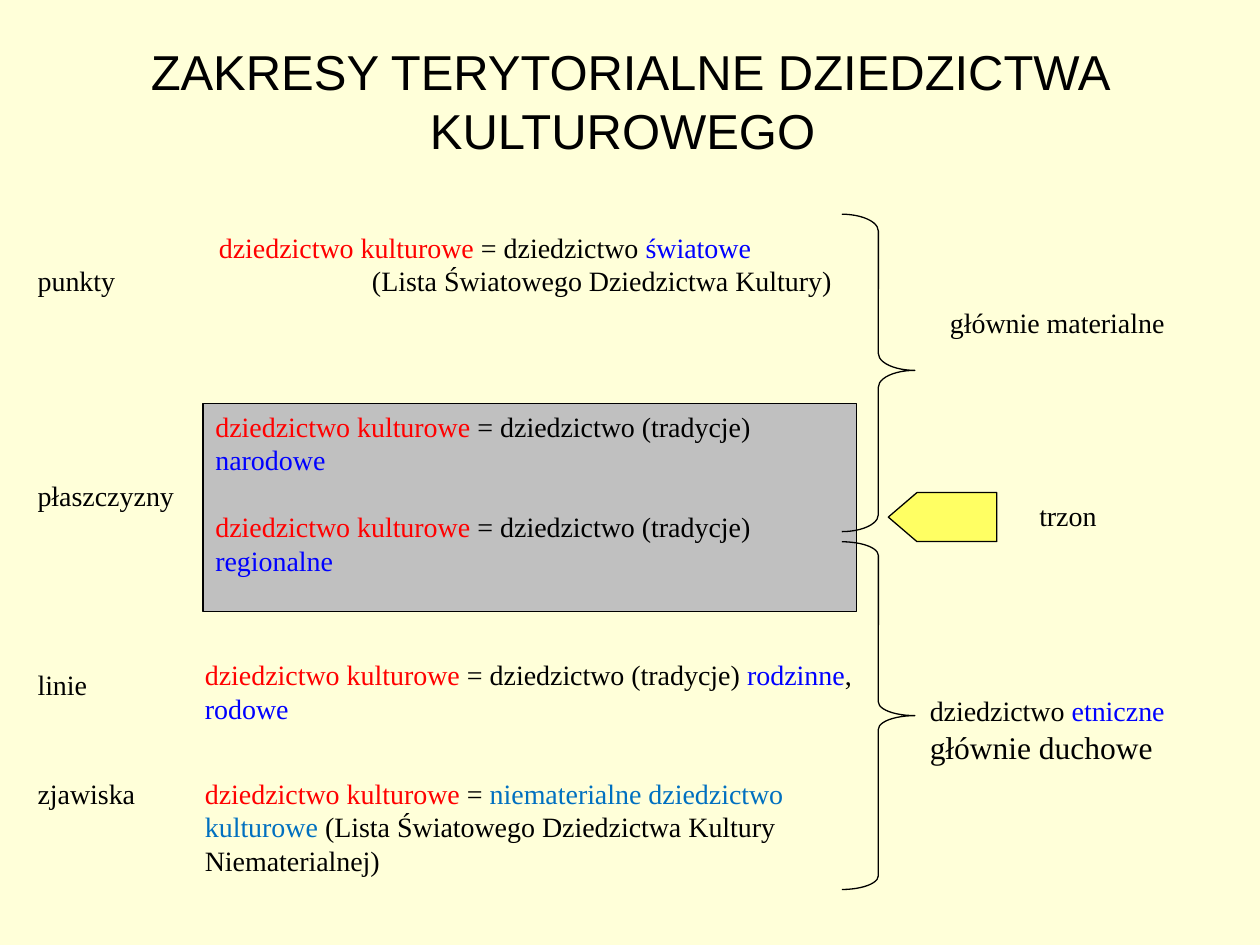
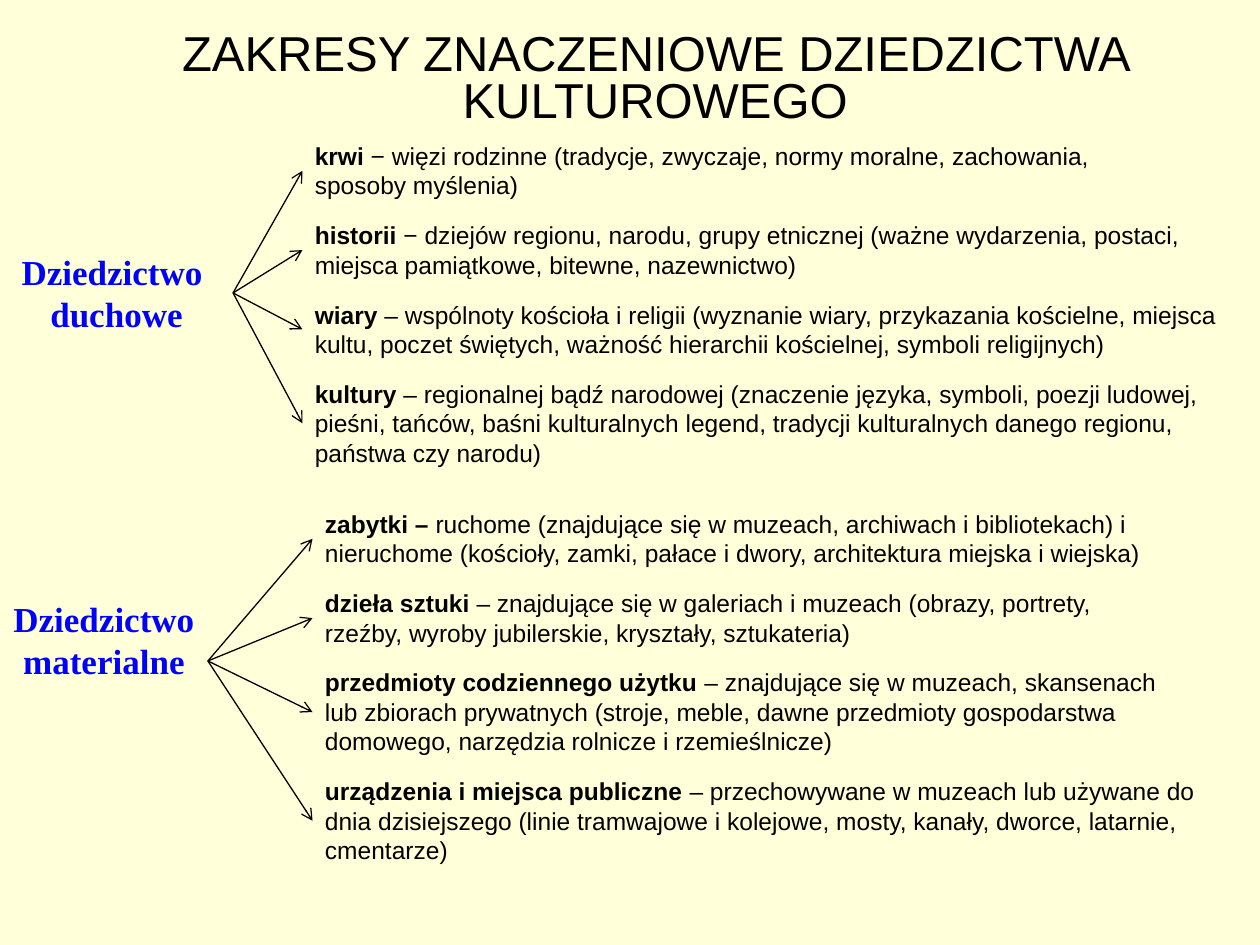
"""Build two slides on the territorial and semantic scopes of cultural heritage."""
from lxml import etree
from pptx import Presentation
from pptx.dml.color import RGBColor
from pptx.enum.shapes import MSO_CONNECTOR, MSO_SHAPE
from pptx.enum.text import MSO_ANCHOR, PP_ALIGN
from pptx.oxml.ns import qn
from pptx.util import Pt

TOP = MSO_ANCHOR.TOP
LEFT, CENTER = PP_ALIGN.LEFT, PP_ALIGN.CENTER
RECTANGLE, ARROW, BRACE = MSO_SHAPE.RECTANGLE, MSO_SHAPE.LEFT_ARROW, MSO_SHAPE.RIGHT_BRACE
STRAIGHT = MSO_CONNECTOR.STRAIGHT

SANS, SERIF = "Arial", "Times New Roman"
THEME = {
    "background": "FFFFD9",
    "line": "000000",
    "line_width": 0.75,
    "core": "C0C0C0",
    "pointer": "FFFF63",
    "title": {"name": SANS, "size": 28, "color": "000000"},
    "plain": {"name": SERIF, "size": 16, "color": "000000"},
    "large": {"name": SERIF, "size": 18, "color": "000000"},
    "term": {"name": SERIF, "size": 16, "color": "FF0000"},
    "scope": {"name": SERIF, "size": 16, "color": "0000FF"},
    "intangible": {"name": SERIF, "size": 16, "color": "0070C0"},
    "group": {"name": SERIF, "size": 20, "color": "0000FF", "bold": True},
    "keyword": {"name": SANS, "size": 14, "color": "000000", "bold": True},
    "detail": {"name": SANS, "size": 14, "color": "000000"},
}

TERM = ("dziedzictwo kulturowe ", "term")
TRADITIONS = ("= dziedzictwo (tradycje) ", "plain")

TERRITORIAL_TITLE = "ZAKRESY TERYTORIALNE DZIEDZICTWA KULTUROWEGO "
LEVELS = [
    ("punkty", 147, 62),
    ("płaszczyzny", 270, 94),
    ("linie", 378, 94),
    ("zjawiska", 440, 96),
]
CORE_BOX = (116, 230.4, 373.6, 119)
CORE_TEXT = [
    [TERM, TRADITIONS, ("narodowe", "scope")],
    [TERM, TRADITIONS, ("regionalne", "scope")],
]
WORLD_BOX = (118, 128, 546, 103)
WORLD_TEXT = [
    [TERM, ("= dziedzictwo ", "plain"), ("światowe", "scope")],
    [("(Lista Światowego Dziedzictwa Kultury)", "plain")],
]
SCOPE_TEXTS = [
    ((110, 372.2, 414.7, 56),
     [[TERM, TRADITIONS, ("rodzinne", "scope"), (", ", "plain"), ("rodowe", "scope")]]),
    ((110, 440, 374.4, 65.5),
     [[TERM, ("= ", "plain"), ("niematerialne dziedzictwo kulturowe ", "intangible"),
       ("(Lista Światowego Dziedzictwa Kultury Niematerialnej)", "plain")]]),
    ((535.7, 170.8, 145.4, 42), [[("głównie materialne", "plain")]]),
    ((586.8, 281.5, 77, 26.6), [[("trzon", "plain")]]),
    ((524.2, 393, 186.5, 104),
     [[("dziedzictwo ", "plain"), ("etniczne", "scope")], [("głównie duchowe", "large")]]),
]
POINTER = ((507.6, 281.5, 62, 28), (1, 0.585))
BRACES = [
    ((481, 122.4, 41.8, 181.4), (0.231, 0.492)),
    ((481, 309.6, 41.8, 198.7), (0.187, 0.5)),
]

SEMANTIC_TITLE = "ZAKRESY ZNACZENIOWE DZIEDZICTWA KULTUROWEGO"
GROUPS = [
    {
        "label": ["Dziedzictwo ", "duchowe"],
        "label_box": (0, 139.7, 133.2, 55.4),
        "list_left": 172.8,
        "list_top": 77,
        "items": [
            ("krwi", " − więzi rodzinne (tradycje, zwyczaje, normy moralne, zachowania, "
             "sposoby myślenia)", 507.6, 2),
            ("historii", " − dziejów regionu, narodu, grupy etnicznej (ważne wydarzenia, "
             "postaci, miejsca pamiątkowe, bitewne, nazewnictwo)", 524.2, 2),
            ("wiary", " – wspólnoty kościoła i religii (wyznanie wiary, przykazania kościelne, "
             "miejsca kultu, poczet świętych, ważność hierarchii kościelnej, "
             "symboli religijnych)", 535.7, 2),
            ("kultury", " – regionalnej bądź narodowej (znaczenie języka, symboli, poezji "
             "ludowej, pieśni, tańców, baśni kulturalnych legend, tradycji kulturalnych "
             "danego regionu, państwa czy narodu)", 547.2, 3),
        ],
    },
    {
        "label": ["Dziedzictwo materialne"],
        "label_box": (0, 337.7, 118.8, 80),
        "list_left": 178.6,
        "list_top": 287.3,
        "items": [
            ("zabytki – ", "ruchome (znajdujące się w muzeach, archiwach i bibliotekach) i "
             "nieruchome (kościoły, zamki, pałace i dwory, architektura miejska i wiejska)",
             527, 2),
            ("dzieła sztuki", " – znajdujące się w galeriach i muzeach (obrazy, portrety, "
             "rzeźby, wyroby jubilerskie, kryształy, sztukateria)", 481.7, 2),
            ("przedmioty codziennego użytku", " – znajdujące się w muzeach, skansenach lub "
             "zbiorach prywatnych (stroje, meble, dawne przedmioty gospodarstwa domowego, "
             "narzędzia rolnicze i rzemieślnicze)", 499, 3),
            ("urządzenia i miejsca publiczne", " – przechowywane w muzeach lub używane do dnia "
             "dzisiejszego (linie tramwajowe i kolejowe, mosty, kanały, dworce, latarnie, "
             "cmentarze)", 527, 3),
        ],
    },
]
LINE_HEIGHT, BOX_PADDING, ITEM_GAP = 16.8, 7.6, 4.1


def points(values):
    return [Pt(value) for value in values]


def color(name):
    return RGBColor.from_string(name)


def add_run(paragraph, text, style):
    run = paragraph.add_run()
    run.text = text
    for attribute, value in THEME[style].items():
        if attribute == "color":
            run.font.color.rgb = color(value)
        else:
            setattr(run.font, attribute, Pt(value) if attribute == "size" else value)


def write(shape, paragraphs, alignment=LEFT, **spacing):
    frame = shape.text_frame
    frame.word_wrap = True
    frame.vertical_anchor = TOP
    for index, runs in enumerate(paragraphs):
        paragraph = frame.add_paragraph() if index else frame.paragraphs[0]
        paragraph.alignment = alignment
        for attribute, value in spacing.items():
            if index or attribute != "space_before":
                setattr(paragraph, attribute, value)
        for text, style in runs:
            add_run(paragraph, text, style)


def add_text(slide, box, paragraphs, alignment=LEFT, **spacing):
    shape = slide.shapes.add_textbox(*points(box))
    write(shape, paragraphs, alignment, **spacing)
    return shape


def add_figure(slide, kind, box, fill=None, adjustments=()):
    shape = slide.shapes.add_shape(kind, *points(box))
    shape.shadow.inherit = False
    if fill:
        shape.fill.solid()
        shape.fill.fore_color.rgb = color(fill)
    else:
        shape.fill.background()
    shape.line.color.rgb = color(THEME["line"])
    shape.line.width = Pt(THEME["line_width"])
    for index, value in enumerate(adjustments):
        shape.adjustments[index] = value
    return shape


def add_arrow(slide, start, end):
    connector = slide.shapes.add_connector(STRAIGHT, *points(start + end))
    connector.line.color.rgb = color(THEME["line"])
    connector.line.width = Pt(THEME["line_width"])
    properties = connector._element.spPr
    etree.SubElement(properties.find(qn("a:ln")), qn("a:tailEnd"), type="arrow")
    etree.SubElement(properties, qn("a:effectLst"))


def add_slide(presentation, title, title_box, **spacing):
    slide = presentation.slides.add_slide(presentation.slide_layouts[6])
    slide.background.fill.solid()
    slide.background.fill.fore_color.rgb = color(THEME["background"])
    add_text(slide, title_box, [[(title, "title")]], CENTER, **spacing)
    return slide


def build_territorial(presentation):
    slide = add_slide(presentation, TERRITORIAL_TITLE, (-14.4, 20, 748, 79))
    world = add_text(slide, WORLD_BOX, WORLD_TEXT)
    world.text_frame.paragraphs[1]._p.get_or_add_pPr().set("marL", str(Pt(87.5)))
    core = add_figure(slide, RECTANGLE, CORE_BOX, THEME["core"])
    write(core, CORE_TEXT, space_before=Pt(19))
    for label, top, width in LEVELS:
        add_text(slide, (14.4, top, width, 27), [[(label, "plain")]])
    for box, paragraphs in SCOPE_TEXTS:
        add_text(slide, box, paragraphs)
    pointer_box, pointer_shape = POINTER
    add_figure(slide, ARROW, pointer_box, THEME["pointer"], pointer_shape)
    for box, adjustments in BRACES:
        add_figure(slide, BRACE, box, adjustments=adjustments)


def build_semantic(presentation):
    slide = add_slide(presentation, SEMANTIC_TITLE, (48.2, 16, 652.3, 81), line_spacing=0.8)
    for group in GROUPS:
        left, top, width, height = group["label_box"]
        origin = (left + width, top + height / 2)
        add_text(slide, group["label_box"], [[(line, "group")] for line in group["label"]], CENTER)
        item_left, item_top = group["list_left"], group["list_top"]
        for keyword, detail, item_width, lines in group["items"]:
            item_height = lines * LINE_HEIGHT + BOX_PADDING
            add_text(slide, (item_left, item_top, item_width, item_height),
                     [[(keyword, "keyword"), (detail, "detail")]])
            add_arrow(slide, origin, (item_left, item_top + item_height / 2))
            item_top += item_height + ITEM_GAP


def main():
    presentation = Presentation()
    presentation.slide_width, presentation.slide_height = Pt(720), Pt(540)
    build_territorial(presentation)
    build_semantic(presentation)
    presentation.save("out.pptx")


if __name__ == "__main__":
    main()
